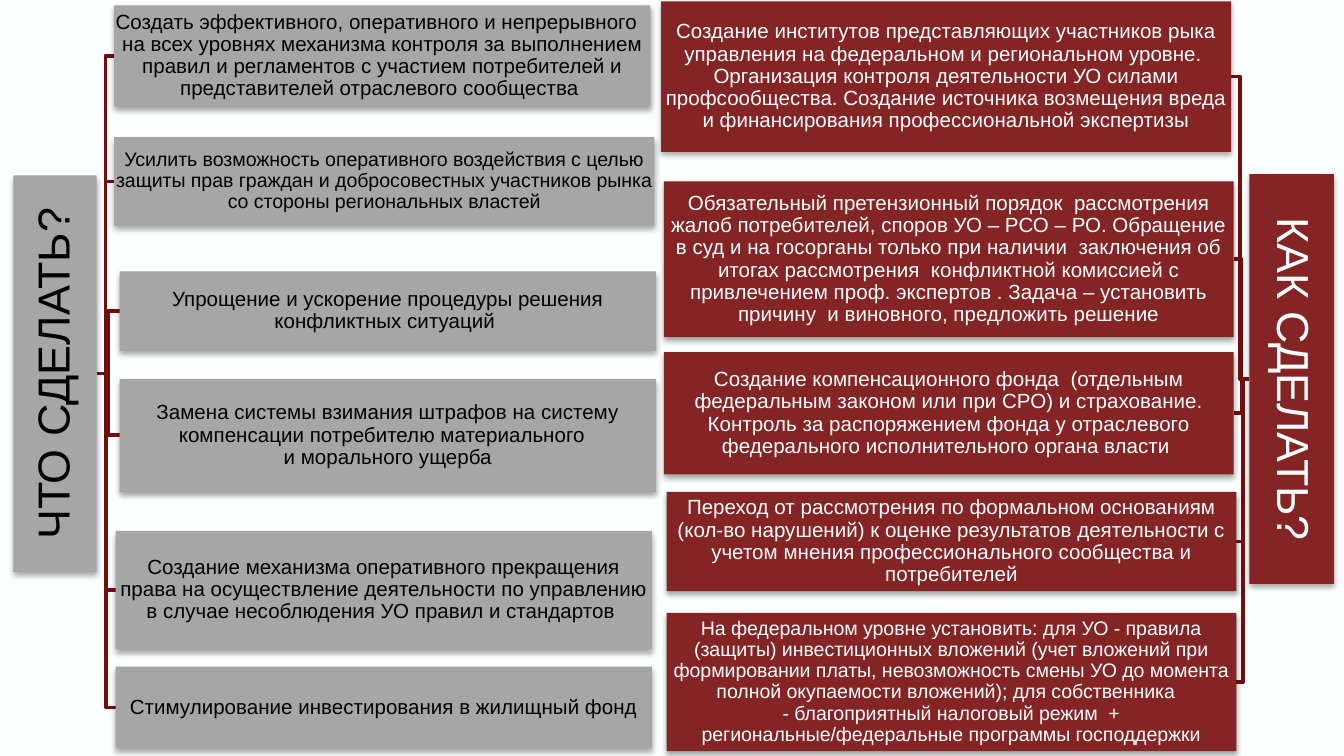
from lxml.etree import SubElement
from pptx import Presentation
from pptx.dml.color import RGBColor
from pptx.enum.shapes import MSO_SHAPE as SHAPE
from pptx.enum.text import MSO_ANCHOR as ANCHOR, PP_ALIGN as ALIGN
from pptx.oxml.ns import qn
from pptx.util import Inches, Pt

BACKGROUND, LINE = "FEFFFF", "740D0D"
SIDES = [
    {
        "title": "ЧТО СДЕЛАТЬ?", "fill": "A6A6A6", "color": "000000",
        "center": (0.41, 2.78), "size": (2.95, 0.62), "rotation": 270,
        "boxes": [
            (0.85, 0.04, 3.99, 0.75, 11, "Создать эффективного, оперативного и непрерывного  \nна всех уровнях механизма контроля за выполнением правил и регламентов с участием потребителей и представителей отраслевого сообщества "),
            (0.85, 1.02, 4.02, 0.66, 10.5, "Усилить возможность оперативного воздействия с целью защиты прав граждан и добросовестных участников рынка со стороны региональных властей"),
            (0.89, 2.02, 3.99, 0.59, 11, "Упрощение и ускорение процедуры решения конфликтных ситуаций "),
            (0.89, 2.82, 3.99, 0.84, 11, "Замена системы взимания штрафов на систему компенсации потребителю материального  \nи морального ущерба"),
            (0.86, 3.95, 3.99, 0.88, 11, "Создание механизма оперативного прекращения права на осуществление деятельности по управлению в случае несоблюдения УО правил и стандартов "),
            (0.86, 4.96, 3.99, 0.61, 11, "Стимулирование инвестирования в жилищный фонд"),
        ],
    },
    {
        "title": "КАК СДЕЛАТЬ?", "fill": "842424", "color": "FFFFFF",
        "center": (9.61, 2.82), "size": (3.05, 0.63), "rotation": 90,
        "boxes": [
            (4.92, 0.01, 4.24, 1.12, 11, "Создание институтов представляющих участников рыка управления на федеральном и региональном уровне.  Организация контроля деятельности УО силами профсообщества. Создание источника возмещения вреда и финансирования профессиональной экспертизы"),
            (4.94, 1.35, 4.24, 1.16, 11, "Обязательный претензионный порядок  рассмотрения жалоб потребителей, споров УО – РСО – РО. Обращение в суд и на госорганы только при наличии  заключения об итогах рассмотрения  конфликтной комиссией с привлечением проф. экспертов . Задача – установить причину  и виновного, предложить решение"),
            (4.94, 2.62, 4.24, 0.91, 11, "Создание компенсационного фонда  (отдельным федеральным законом или при СРО) и страхование. Контроль за распоряжением фонда у отраслевого федерального исполнительного органа власти "),
            (4.96, 3.66, 4.24, 0.74, 11, "Переход от рассмотрения по формальном основаниям (кол-во нарушений) к оценке результатов деятельности с учетом мнения профессионального сообщества и потребителей"),
            (4.96, 4.56, 4.24, 1.03, 10.5, "На федеральном уровне установить: для УО - правила (защиты) инвестиционных вложений (учет вложений при формировании платы, невозможность смены УО до момента полной окупаемости вложений); для собственника  \n- благоприятный налоговый режим  + региональные/федеральные программы господдержки"),
        ],
    },
]


def rgb(value):
    return RGBColor.from_string(value)


def apply(target, values):
    for name, value in values.items():
        setattr(target, name, value)


def add_shadow(sp):
    sp.shadow.inherit = False
    effects = sp._element.spPr.find(qn("a:effectLst"))
    shadow = SubElement(effects, qn("a:outerShdw"), blurRad=str(Pt(3.1)),
                        dist=str(Pt(1.8)), dir="5400000", rotWithShape="0")
    color = SubElement(shadow, qn("a:srgbClr"), val="000000")
    SubElement(color, qn("a:alpha"), val="35000")


def add_box(s, place, text, size, side, inset=0.01, rotation=0):
    sp = s.shapes.add_shape(SHAPE.RECTANGLE, *map(Inches, place))
    sp.rotation = rotation
    sp.fill.solid()
    sp.fill.fore_color.rgb = rgb(side["fill"])
    sp.line.fill.background()
    add_shadow(sp)
    tf = sp.text_frame
    margins = {f"margin_{edge}": Inches(inset) for edge in ("left", "top", "right", "bottom")}
    apply(tf, {"word_wrap": True, "vertical_anchor": ANCHOR.MIDDLE, **margins})
    p = tf.paragraphs[0]
    p.text = text.replace("\n", "\v")
    apply(p, {"alignment": ALIGN.CENTER, "line_spacing": 0.9})
    for r in p.runs:
        apply(r.font, {"name": "Arial", "size": Pt(size)})
        r.font.color.rgb = rgb(side["color"])


def add_branch(s, start, end):
    (x1, y1), (x2, y2) = start, end
    middle = (x1 + x2) / 2
    points = [(Inches(x), Inches(y)) for x, y in [start, (middle, y1), (middle, y2), end]]
    builder = s.shapes.build_freeform(*points[0])
    builder.add_line_segments(points[1:], close=False)
    sp = builder.convert_to_shape()
    sp.fill.background()
    sp.line.color.rgb = rgb(LINE)
    sp.line.width = Pt(2)
    sp.shadow.inherit = False


def add_side(s, side):
    cx, cy = side["center"]
    width, height = side["size"]
    on_left = cx < 5
    root = (cx + height / 2 if on_left else cx - height / 2, cy)
    for left, top, w, h, *_ in side["boxes"]:
        add_branch(s, root, (left if on_left else left + w, top + h / 2))
    add_box(s, (cx - width / 2, cy - height / 2, width, height), side["title"], 24, side,
            inset=0.02, rotation=side["rotation"])
    for *place, size, text in side["boxes"]:
        add_box(s, place, text, size, side)


def main():
    prs = Presentation()
    width = Inches(10)
    apply(prs, {"slide_width": width, "slide_height": width * 9 // 16})
    s = prs.slides.add_slide(prs.slide_layouts[6])
    s.background.fill.solid()
    s.background.fill.fore_color.rgb = rgb(BACKGROUND)
    for side in SIDES:
        add_side(s, side)
    prs.save("out.pptx")


if __name__ == "__main__":
    main()
